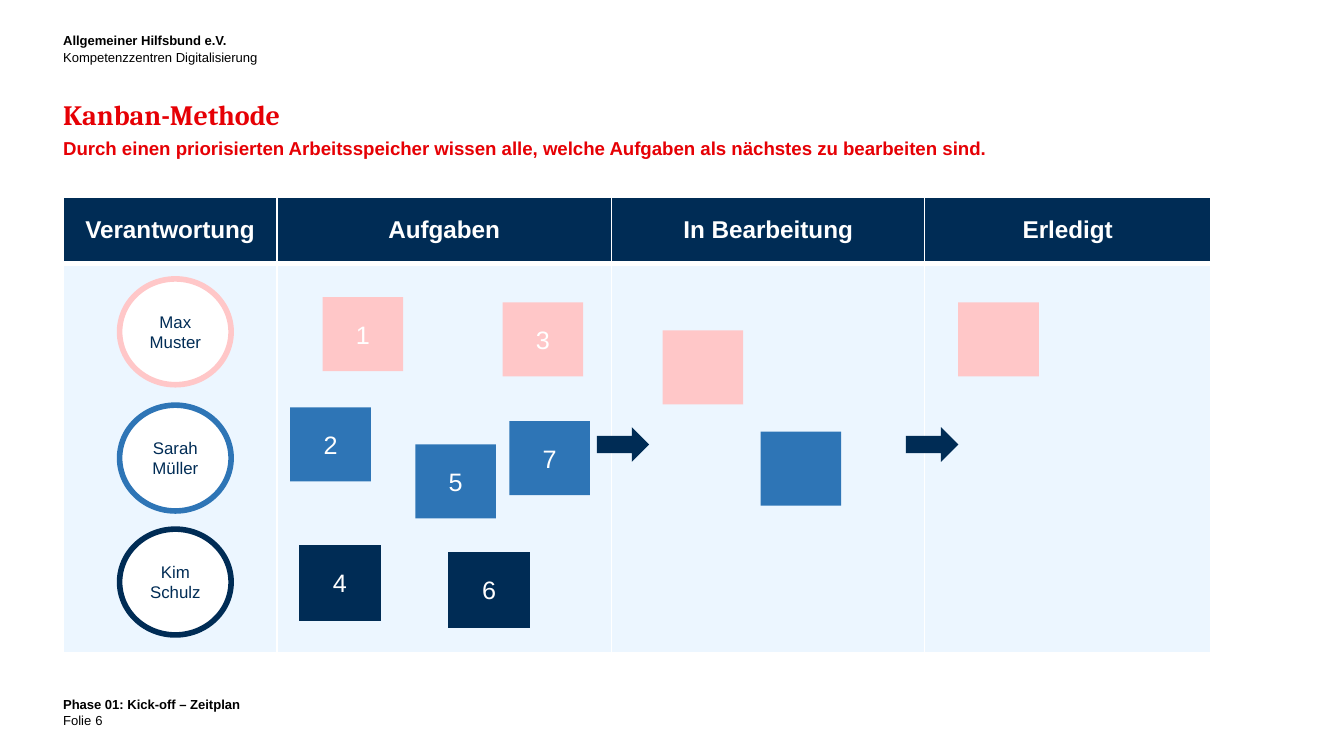
"""Build a Kanban board slide with three people, their task cards and flow arrows."""
from lxml.etree import SubElement
from pptx import Presentation
from pptx.dml.color import RGBColor
from pptx.enum.shapes import MSO_SHAPE as Shape
from pptx.enum.text import MSO_ANCHOR as Anchor, PP_ALIGN as Align
from pptx.oxml.ns import qn
from pptx.util import Inches, Pt

COLORS = {"navy": "002C55", "blue": "2E75B6", "pink": "FFC7C8", "pale": "ECF6FF",
          "red": "E60005", "white": "FFFFFF", "black": "000000"}
WIDTH = 10
HEIGHT = WIDTH * 9 / 16
MARGIN = 4.7

SMALL = {"size": 7, "name": "Arial", "color": "black", "bold": False}
STRONG = {**SMALL, "bold": True}
TITLE = {"size": 15, "name": "Cambria", "color": "red", "bold": True}
SUBTITLE = {**TITLE, "size": 10, "name": "Arial"}
HEADER = {"size": 13, "name": "Arial", "color": "white", "bold": True}
NUMBER = {"size": 13.5, "name": "Arial", "color": "white"}
PERSON = {"size": 9, "name": "Arial", "color": "navy"}

TEXTS = [
    ((MARGIN, 4.2, 17.9, 4.4), Anchor.TOP, 9,
     [[("Allgemeiner Hilfsbund e.V.", STRONG)], [("Kompetenzzentren Digitalisierung", SMALL)]]),
    ((MARGIN, 13.7, 90.6, 6.6), Anchor.TOP, 15,
     [[("Kanban-Methode", TITLE),
       ("Durch einen priorisierten Arbeitsspeicher wissen alle, "
        "welche Aufgaben als nächstes zu bearbeiten sind.", SUBTITLE)]]),
    ((MARGIN, 92, 90.6, 1.6), Anchor.TOP, 9, [[("Phase 01: Kick-off – Zeitplan", STRONG)]]),
    ((MARGIN, 94, 3, 2.3), Anchor.BOTTOM, 9, [[("Folie", SMALL)]]),
    ((7.1, 94.2, 22.5, 2.1), Anchor.BOTTOM, 9, [[("6", SMALL)]]),
]
COLUMNS = [("Verantwortung", 15.9), ("Aufgaben", 24.9), ("In Bearbeitung", 23.3), ("Erledigt", 21.3)]
ROWS = [8.7, 51.6]
TABLE_TOP = 26.1
PEOPLE = [("Max Muster", "pink", 36.9), ("Sarah Müller", "blue", 53.6), ("Kim Schulz", "navy", 70)]
CARDS = {
    "pink": [("1", 24, 39.3), ("3", 37.4, 40), ("", 49.3, 43.7), ("", 71.3, 40)],
    "blue": [("2", 21.6, 53.9), ("5", 30.9, 58.8), ("7", 37.9, 55.7), ("", 56.6, 57.1)],
    "navy": [("4", 22.3, 72.2), ("6", 33.4, 73.1)],
}
ARROW_LEFTS, ARROW_TOP = (44.4, 67.4), 56.5
PERSON_LEFT, PERSON_SIZE = 8.9, (8.3, 14)
CARD_SIZE, ARROW_SIZE = (6, 9.8), (3.9, 4.6)


def across(share):
    return Inches(WIDTH * share / 100)


def down(share):
    return Inches(HEIGHT * share / 100)


def place(left, top, width, height):
    return across(left), down(top), across(width), down(height)


def rgb(name):
    return RGBColor.from_string(COLORS[name])


def add_span(para, text, style):
    span = para.add_run()
    span.text = text
    for key, value in style.items():
        if key == "color":
            span.font.color.rgb = rgb(value)
        else:
            setattr(span.font, key, Pt(value) if key == "size" else value)


def set_insets(frame, inset):
    for side in ("left", "top", "right", "bottom"):
        setattr(frame, f"margin_{side}", Inches(inset))


def add_text(page, box, anchor, spacing, lines):
    frame = page.shapes.add_textbox(*place(*box)).text_frame
    frame.word_wrap = True
    frame.vertical_anchor = anchor
    set_insets(frame, 0)
    for index, spans in enumerate(lines):
        para = frame.add_paragraph() if index else frame.paragraphs[0]
        para.line_spacing = Pt(spacing)
        for position, (text, style) in enumerate(spans):
            if position:
                para.add_line_break()
            add_span(para, text, style)


def add_figure(page, kind, box, fill, text="", style=None, line=None, weight=1):
    figure = page.shapes.add_shape(kind, *place(*box))
    figure.shadow.inherit = False
    figure.fill.solid()
    figure.fill.fore_color.rgb = rgb(fill)
    if line:
        figure.line.color.rgb = rgb(line)
        figure.line.width = Pt(weight)
        SubElement(figure.line._get_or_add_ln(), qn("a:miter"), lim="800000")
    else:
        figure.line.fill.background()
    if text:
        frame = figure.text_frame
        frame.word_wrap = True
        frame.vertical_anchor = Anchor.MIDDLE
        set_insets(frame, 0.04)
        frame.paragraphs[0].alignment = Align.CENTER
        add_span(frame.paragraphs[0], text, style)


def set_borders(cell, weights):
    props = cell._tc.get_or_add_tcPr()
    for index, (side, weight) in enumerate(weights.items()):
        edge = props.makeelement(qn(f"a:ln{side}"), {"w": str(Pt(weight))})
        fill = SubElement(edge, qn("a:solidFill"))
        SubElement(fill, qn("a:srgbClr"), val=COLORS["white"])
        props.insert(index, edge)


def add_board(page):
    box = place(MARGIN, TABLE_TOP, sum(share for _, share in COLUMNS), sum(ROWS))
    board = page.shapes.add_table(len(ROWS), len(COLUMNS), *box).table
    for row, share in zip(board.rows, ROWS):
        row.height = down(share)
    for index, (heading, share) in enumerate(COLUMNS):
        board.columns[index].width = across(share)
        for row, (fill, joint) in enumerate([("navy", {"B": 3}), ("pale", {"T": 3})]):
            cell = board.cell(row, index)
            cell.fill.solid()
            cell.fill.fore_color.rgb = rgb(fill)
            set_borders(cell, {**dict.fromkeys("LRTB", 1), **joint})
        head = board.cell(0, index)
        head.vertical_anchor = Anchor.MIDDLE
        head.text_frame.paragraphs[0].alignment = Align.CENTER
        add_span(head.text_frame.paragraphs[0], heading, HEADER)


def main():
    deck = Presentation()
    deck.slide_width, deck.slide_height = Inches(WIDTH), Inches(HEIGHT)
    page = deck.slides.add_slide(deck.slide_layouts[6])
    for entry in TEXTS:
        add_text(page, *entry)
    add_board(page)
    for name, color, top in PEOPLE:
        add_figure(page, Shape.OVAL, (PERSON_LEFT, top, *PERSON_SIZE), "white", name, PERSON, color, 3)
    for color, cards in CARDS.items():
        outline = color if color == "navy" else None
        for number, left, top in cards:
            add_figure(page, Shape.RECTANGLE, (left, top, *CARD_SIZE), color, number, NUMBER, outline)
    for left in ARROW_LEFTS:
        add_figure(page, Shape.RIGHT_ARROW, (left, ARROW_TOP, *ARROW_SIZE), "navy")
    deck.save("out.pptx")


if __name__ == "__main__":
    main()
